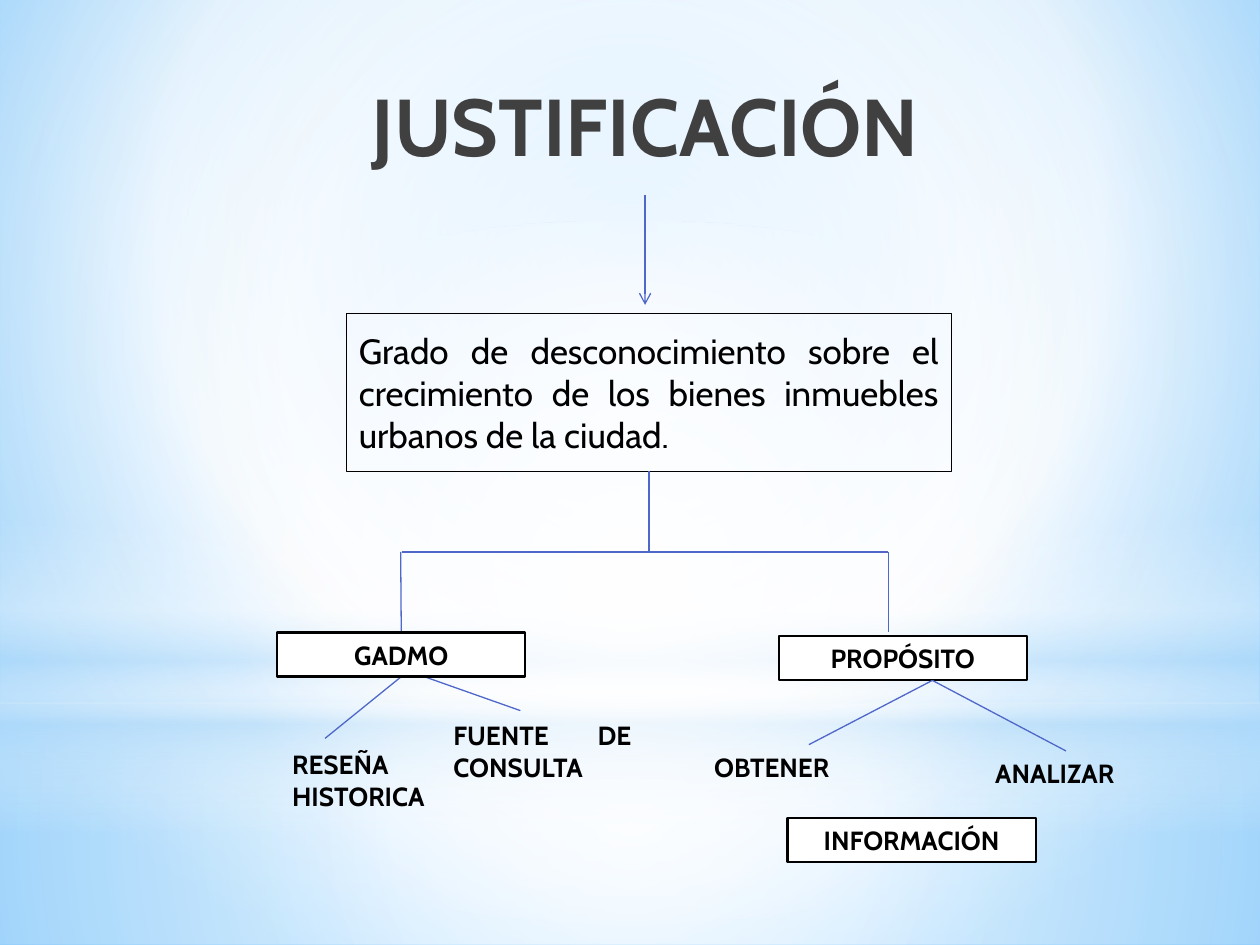
import pptx
import pptx.dml.color
import pptx.enum.shapes
import pptx.enum.text
import pptx.oxml
import pptx.oxml.ns
import pptx.util

Inches = pptx.util.Inches
KIND = pptx.enum.shapes.MSO_SHAPE
ALIGN = pptx.enum.text.PP_ALIGN
FIT = pptx.enum.text.MSO_AUTO_SIZE
MIDDLE = pptx.enum.text.MSO_ANCHOR.MIDDLE
FONT = "Cabin"
COLORS = {
    "ink": "000000",
    "title": "404040",
    "line": "4E67C8",
    "white": "FFFFFF",
    "pale": "B4DCFA",
    "sky": "9ED5FF",
    "blue": "5BB9FF",
}


def color(name):
    """Return the named colour."""
    return pptx.dml.color.RGBColor.from_string(COLORS[name])


def blend(parent, stops, focus=None):
    """Swap a solid fill for a gradient, round if a focus is given."""
    marks = "".join(
        f'<a:gs pos="{pos * 1000}"><a:srgbClr val="{COLORS[name]}">'
        f'<a:alpha val="{alpha * 1000}"/></a:srgbClr></a:gs>'
        for pos, name, alpha in stops
    )
    if focus:
        rect = " ".join(f'{side}="{part * 1000}"' for side, part in zip("ltrb", focus))
        way = f'<a:path path="circle"><a:fillToRect {rect}/></a:path>'
    else:
        way = '<a:lin ang="5400000" scaled="0"/>'
    space = pptx.oxml.ns.nsdecls("a")
    grad = pptx.oxml.parse_xml(
        f'<a:gradFill {space} rotWithShape="1"><a:gsLst>{marks}</a:gsLst>{way}</a:gradFill>'
    )
    parent.replace(parent.find(pptx.oxml.ns.qn("a:solidFill")), grad)


def glow(slide, kind, place, stops, focus=None):
    """Add a soft backdrop shape."""
    shape = slide.shapes.add_shape(kind, *map(Inches, place))
    shape.shadow.inherit = False
    shape.line.fill.background()
    shape.fill.solid()
    blend(shape.element.spPr, stops, focus)


def backdrop(slide):
    """Paint the background and its light effects."""
    slide.background.fill.solid()
    base = slide.element.xpath("p:cSld/p:bg/p:bgPr")[0]
    blend(base, [(0, "sky", 100), (60, "white", 100), (100, "blue", 100)], (20, 10, 20, 60))
    mid = (50, 50, 50, 50)
    glow(slide, KIND.RECTANGLE, (0, 5.58, 10, 1.92),
         [(0, "white", 91), (37, "white", 76), (100, "pale", 79)], mid)
    glow(slide, KIND.RECTANGLE, (0, 0, 10, 5.58),
         [(0, "white", 89), (48, "white", 62), (100, "pale", 79)], mid)
    glow(slide, KIND.RECTANGLE, (0, 4.12, 10, 2.5),
         [(0, "white", 0), (29, "white", 30), (45, "pale", 40),
          (55, "white", 26), (65, "pale", 60), (100, "white", 0)])
    glow(slide, KIND.OVAL, (0, 1.75, 10, 5.58),
         [(0, "white", 100), (56, "white", 0)], mid)


def write(shape, text, size, align, bold=True, tint="ink"):
    """Set one wrapped paragraph of text."""
    frame = shape.text_frame
    frame.word_wrap = True
    para = frame.paragraphs[0]
    para.alignment = align
    run = para.add_run()
    run.text = text
    font = run.font
    font.name, font.size, font.bold = FONT, pptx.util.Pt(size), bold
    font.color.rgb = color(tint)
    return frame


def head(slide, text):
    """Place the title above the backdrop."""
    title = slide.shapes.title
    title.left, title.top, title.width, title.height = map(Inches, (2.49, 0.36, 5.26, 1.25))
    frame = write(title, text, 46, ALIGN.CENTER, tint="title")
    frame.vertical_anchor = MIDDLE
    frame.auto_size = FIT.NONE
    title.element.getparent().append(title.element)


def frame_box(slide, place, weight):
    """Add a black outlined box without fill."""
    shape = slide.shapes.add_shape(KIND.RECTANGLE, *map(Inches, place))
    shape.shadow.inherit = False
    shape.fill.background()
    shape.line.color.rgb = color("ink")
    shape.line.width = pptx.util.Pt(weight)
    return shape


def topic(slide, left, top, text):
    """Add a white box with a bold heading."""
    shape = frame_box(slide, (left, top, 1.97, 0.35), 1.25)
    shape.fill.solid()
    shape.fill.fore_color.rgb = color("white")
    write(shape, text, 15, ALIGN.CENTER).auto_size = FIT.SHAPE_TO_FIT_TEXT
    return shape


def label(slide, place, text, align=ALIGN.JUSTIFY):
    """Add a bold label."""
    shape = slide.shapes.add_textbox(*map(Inches, place))
    write(shape, text, 15, align).auto_size = FIT.SHAPE_TO_FIT_TEXT


def link(slide, start, end, arrow=False):
    """Add a thin straight line."""
    line = slide.shapes.add_connector(
        pptx.enum.shapes.MSO_CONNECTOR.STRAIGHT, *map(Inches, start + end))
    line.line.color.rgb = color("line")
    line.line.width = pptx.util.Pt(0.75)
    space = pptx.oxml.ns.nsdecls("a")
    if arrow:
        line.line._get_or_add_ln().append(
            pptx.oxml.parse_xml(f'<a:tailEnd {space} type="arrow"/>'))
    line.element.spPr.append(pptx.oxml.parse_xml(f"<a:effectLst {space}/>"))
    return line


def main():
    """Build the slide and save it."""
    deck = pptx.Presentation()
    deck.slide_width, deck.slide_height = Inches(10), Inches(7.5)
    slide = deck.slides.add_slide(deck.slide_layouts[5])
    for spot in list(slide.placeholders):
        if spot.placeholder_format.idx:
            spot.element.getparent().remove(spot.element)
    backdrop(slide)
    for end in ((2.58, 5.86), (4.13, 5.64)):
        link(slide, (3.21 if end[0] < 3 else 3.31, 5.35), end)
    head(slide, "JUSTIFICACIÓN")
    link(slide, (5.12, 1.55), (5.12, 2.42), arrow=True)
    cause = frame_box(slide, (2.75, 2.49, 4.8, 1.25), 0.75)
    write(cause, "Grado de desconocimiento sobre el crecimiento de los bienes "
          "inmuebles urbanos de la ciudad.", 20, ALIGN.JUSTIFY, False).vertical_anchor = MIDDLE

    fork = 4.38
    link(slide, (5.15, 3.74), (5.15, fork)).begin_connect(cause, 2)
    link(slide, (3.19, fork), (7.05, fork))
    drop = link(slide, (3.18, fork), (3.18, 5.02))
    link(slide, (7.05, fork), (7.05, 5.02))
    drop.end_connect(topic(slide, 2.2, 5.02, "GADMO"), 0)
    topic(slide, 6.18, 5.05, "PROPÓSITO")
    for end in ((6.42, 5.91), (8.46, 5.96)):
        link(slide, (7.4, 5.4), end)
    label(slide, (2.22, 5.89, 1.5, 0.61), "RESEÑA HISTORICA", ALIGN.LEFT)
    label(slide, (3.5, 5.66, 1.61, 0.61), "FUENTE DE CONSULTA")
    label(slide, (5.57, 5.91, 1.34, 0.35), "OBTENER")
    label(slide, (7.8, 5.96, 1.34, 0.35), "ANALIZAR")
    topic(slide, 6.25, 6.49, "INFORMACIÓN")
    deck.save("out.pptx")


if __name__ == "__main__":
    main()
